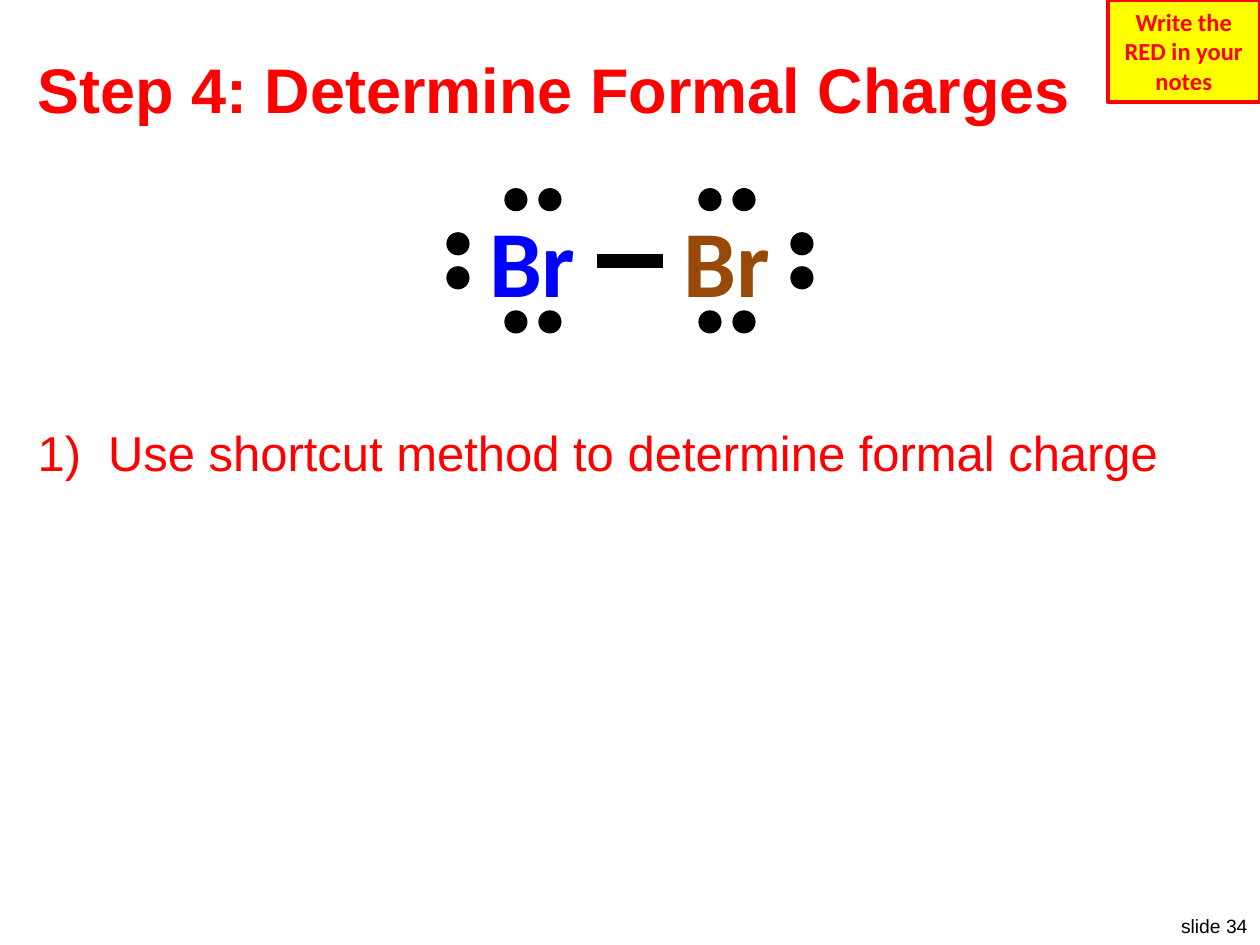
from lxml import etree
from pptx import Presentation
from pptx.dml.color import RGBColor
from pptx.enum import shapes, text
from pptx.oxml import ns
from pptx.util import Inches, Pt

RED = "FF0000"
BLACK = "000000"
DOT_SIZE = 0.17
DOT_STEP = 0.27


def color(hex_string):
    return RGBColor.from_string(hex_string)


def write(shape, words, size, hex_color, font="Arial", bold=False,
          align=text.PP_ALIGN.LEFT, wrap=True):
    frame = shape.text_frame
    frame.word_wrap = wrap
    paragraph = frame.paragraphs[0]
    paragraph.text = words
    paragraph.alignment = align
    paragraph.font.name = font
    paragraph.font.size = Pt(size)
    paragraph.font.bold = bold
    paragraph.font.color.rgb = color(hex_color)
    return paragraph


def add_text(slide, left, top, width, height, *content, **style):
    box = slide.shapes.add_textbox(Inches(left), Inches(top), Inches(width), Inches(height))
    write(box, *content, **style)
    return box


def add_shape(slide, kind, left, top, width, height, fill, line, line_width):
    shape = slide.shapes.add_shape(
        kind, Inches(left), Inches(top), Inches(width), Inches(height))
    shape.shadow.inherit = False
    shape.fill.solid()
    shape.fill.fore_color.rgb = color(fill)
    shape.line.color.rgb = color(line)
    shape.line.width = Pt(line_width)
    return shape


def number_paragraph(paragraph, indent):
    properties = paragraph._p.get_or_add_pPr()
    properties.set("marL", str(Inches(indent)))
    properties.set("indent", str(-Inches(indent)))
    numbering = etree.SubElement(properties, ns.qn("a:buAutoNum"), type="arabicParenR")
    default_run = properties.find(ns.qn("a:defRPr"))
    if default_run is not None:
        default_run.addprevious(numbering)


def add_dot(slide, left, top):
    add_shape(slide, shapes.MSO_SHAPE.OVAL, left, top, DOT_SIZE, DOT_SIZE, BLACK, BLACK, 1)


def add_atom(slide, left, hex_color, side_dots_left):
    symbol = add_text(slide, left, 1.61, 0.69, 0.91, "Br", 54, hex_color, font="Calibri",
                      bold=True, align=text.PP_ALIGN.CENTER, wrap=False)
    frame = symbol.text_frame
    frame.margin_left = frame.margin_right = frame.margin_top = frame.margin_bottom = 0
    for step in (0, DOT_STEP):
        for top in (1.5, 2.47):
            add_dot(slide, left + 0.13 + step, top)
        add_dot(slide, side_dots_left, 1.85 + step)


def add_bond(slide, start, end, height):
    bond = slide.shapes.add_connector(
        shapes.MSO_CONNECTOR.STRAIGHT,
        Inches(start), Inches(height), Inches(end), Inches(height))
    bond.line.color.rgb = color(BLACK)
    bond.line.width = Pt(8)
    etree.SubElement(bond._element.spPr, ns.qn("a:effectLst"))


def add_note(slide):
    note = add_shape(slide, shapes.MSO_SHAPE.RECTANGLE, 8.79, 0, 1.21, 0.81,
                     "FFFF00", RED, 2.25)
    write(note, "Write the RED in your notes", 14, RED, font="Calibri", bold=True,
          align=text.PP_ALIGN.CENTER)


def main():
    presentation = Presentation()
    presentation.slide_width = Inches(10)
    presentation.slide_height = Inches(7.5)
    slide = presentation.slides.add_slide(presentation.slide_layouts[6])

    add_text(slide, 9.25, 7.21, 0.75, 0.29, "slide 34", 11, BLACK,
             align=text.PP_ALIGN.RIGHT, wrap=False)
    title = add_text(slide, 0.2, 0.3, 9.6, 0.8, "Step 4: Determine Formal Charges",
                     36, RED, bold=True)
    title.text_frame.vertical_anchor = text.MSO_ANCHOR.MIDDLE
    body = add_text(slide, 0.2, 3.3, 9.6, 3.95,
                    "Use shortcut method to determine formal charge", 28, RED)
    instruction = body.text_frame.paragraphs[0]
    instruction.space_before = Pt(12)
    number_paragraph(instruction, 0.56)

    add_note(slide)
    add_atom(slide, 5.42, "984807", 6.28)
    add_atom(slide, 3.88, "0000FF", 3.55)
    add_bond(slide, 5.26, 4.74, 2.07)

    presentation.save("out.pptx")


if __name__ == "__main__":
    main()
